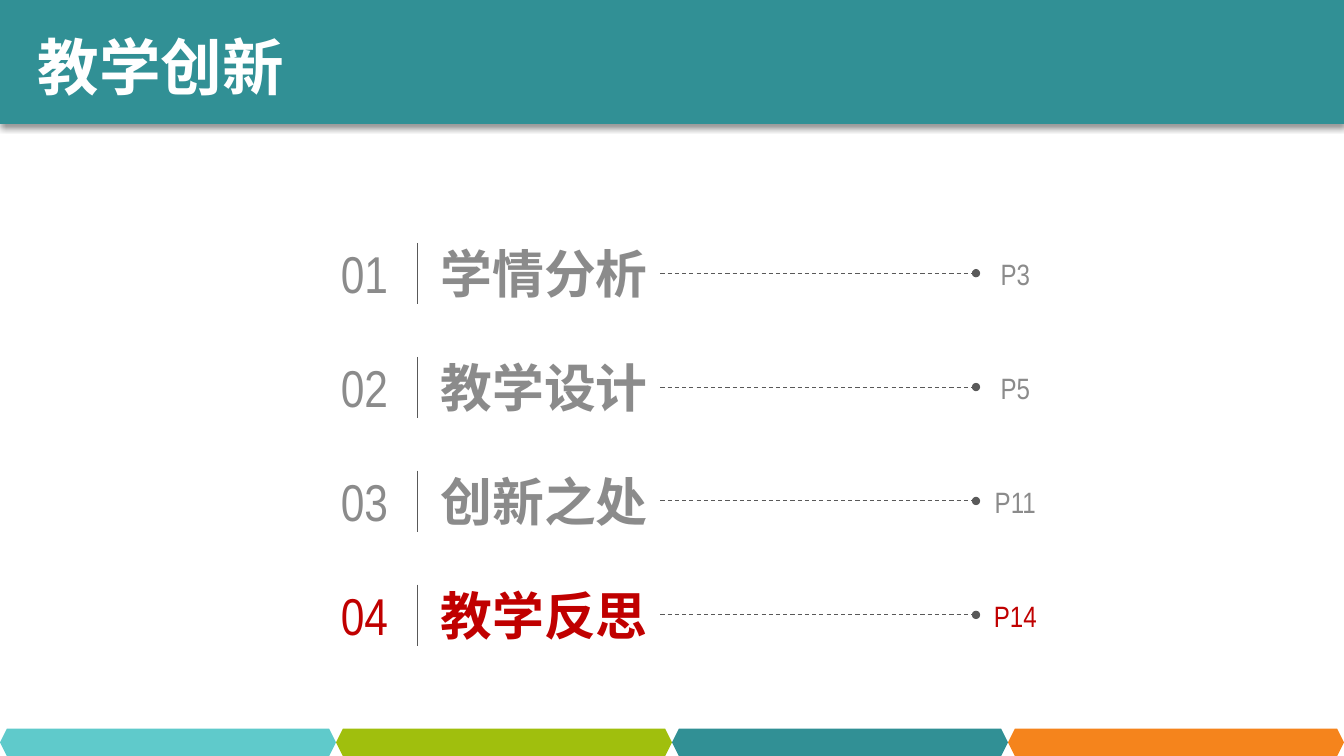
from pptx import Presentation
from pptx.dml.color import RGBColor
from pptx.enum.dml import MSO_LINE
from pptx.enum.shapes import MSO_CONNECTOR, MSO_SHAPE
from pptx.enum.text import MSO_AUTO_SIZE, PP_ALIGN
from pptx.oxml.ns import qn
from pptx.util import Inches, Pt
from lxml.etree import SubElement

TITLE = "教学创新"
CHAPTERS = [
    ("01", "学情分析", "P3"),
    ("02", "教学设计", "P5"),
    ("03", "创新之处", "P11"),
    ("04", "教学反思", "P14"),
]
CURRENT_CHAPTER = "04"
FOOTER_COLORS = ["5FCACB", "A0BF0D", "319095", "F5841C"]

GRAY, RED, TEAL, WHITE, RULE = "8B8B8B", "C00000", "319095", "FFFFFF", "595959"
LATIN_FONT, CHINESE_FONT = "Arial Narrow", "Noto Sans CJK SC"
SLIDE_WIDTH, SLIDE_HEIGHT = 13.33, 7.5
FIRST_ROW_TOP, ROW_PITCH, ROW_HEIGHT = 2.33, 1.13, 0.76
FOOTER_HEIGHT = 0.27


def rgb(color):
    return RGBColor.from_string(color)


def add_text(text, left, top, width, height, size, font, color,
             bold=False, align=PP_ALIGN.CENTER, insets=(0.13, 0.07), wrap=True):
    box = slide.shapes.add_textbox(Inches(left), Inches(top), Inches(width), Inches(height))
    frame = box.text_frame
    frame.text = text
    frame.word_wrap = wrap
    frame.auto_size = MSO_AUTO_SIZE.SHAPE_TO_FIT_TEXT
    frame.margin_left = frame.margin_right = Inches(insets[0])
    frame.margin_top = frame.margin_bottom = Inches(insets[1])
    paragraph = frame.paragraphs[0]
    paragraph.alignment = align
    run = paragraph.runs[0]
    run.font.size = Pt(size)
    run.font.bold = bold
    run.font.color.rgb = rgb(color)
    run.font.name = font
    SubElement(run.font._element, qn("a:ea"), typeface=font)


def add_rule(x1, y1, x2, y2, dotted_leader=False):
    """Draw a thin rule; a dotted leader is dashed and ends in a dot."""
    rule = slide.shapes.add_connector(
        MSO_CONNECTOR.STRAIGHT, Inches(x1), Inches(y1), Inches(x2), Inches(y2))
    rule.line.color.rgb = rgb(RULE)
    rule.line.width = Pt(0.75)
    if dotted_leader:
        rule.line.dash_style = MSO_LINE.DASH
        SubElement(rule.line._get_or_add_ln(), qn("a:tailEnd"), type="oval")
    SubElement(rule._element.spPr, qn("a:effectLst"))


def add_block(shapes, preset, left, top, width, height, color):
    block = shapes.add_shape(preset, Inches(left), Inches(top), Inches(width), Inches(height))
    block.shadow.inherit = False
    block.fill.solid()
    block.fill.fore_color.rgb = rgb(color)
    block.line.fill.background()
    return block


def add_drop_shadow(block):
    effects = block._element.spPr.find(qn("a:effectLst"))
    shadow = SubElement(effects, qn("a:outerShdw"), blurRad=str(Pt(4)), dist=str(Pt(3)),
                        dir="5400000", algn="t", rotWithShape="0")
    black = SubElement(shadow, qn("a:srgbClr"), val="000000")
    SubElement(black, qn("a:alpha"), val="40000")


prs = Presentation()
prs.slide_width, prs.slide_height = Inches(SLIDE_WIDTH), Inches(SLIDE_HEIGHT)
slide = prs.slides.add_slide(prs.slide_layouts[6])

for row, (number, chapter, page) in enumerate(CHAPTERS):
    top = FIRST_ROW_TOP + row * ROW_PITCH
    middle = top + ROW_HEIGHT / 2
    color = RED if number == CURRENT_CHAPTER else GRAY
    add_text(number, 3.18, top, 0.87, ROW_HEIGHT, 37, LATIN_FONT, color)
    add_rule(4.14, top + 0.08, 4.14, top + 0.69)
    add_text(chapter, 4.24, top, 3.67, ROW_HEIGHT, 37, CHINESE_FONT, color,
             bold=True, align=PP_ALIGN.LEFT)
    add_rule(6.55, middle, 9.68, middle, dotted_leader=True)
    add_text(page, 9.59, top + 0.14, 0.96, 0.49, 21, LATIN_FONT, color)

header = add_block(slide.shapes, MSO_SHAPE.RECTANGLE, 0, 0, SLIDE_WIDTH, 1.23, TEAL)
add_drop_shadow(header)
add_text(TITLE, 0.26, 0.24, 2.67, 0.84, 44, CHINESE_FONT, WHITE,
         bold=True, insets=(0.1, 0.05), wrap=False)

footer = slide.shapes.add_group_shape()
segment_width = SLIDE_WIDTH / len(FOOTER_COLORS)
for position, color in enumerate(FOOTER_COLORS):
    add_block(footer.shapes, MSO_SHAPE.HEXAGON, position * segment_width,
              SLIDE_HEIGHT - FOOTER_HEIGHT, segment_width, FOOTER_HEIGHT, color)

prs.save("out.pptx")
